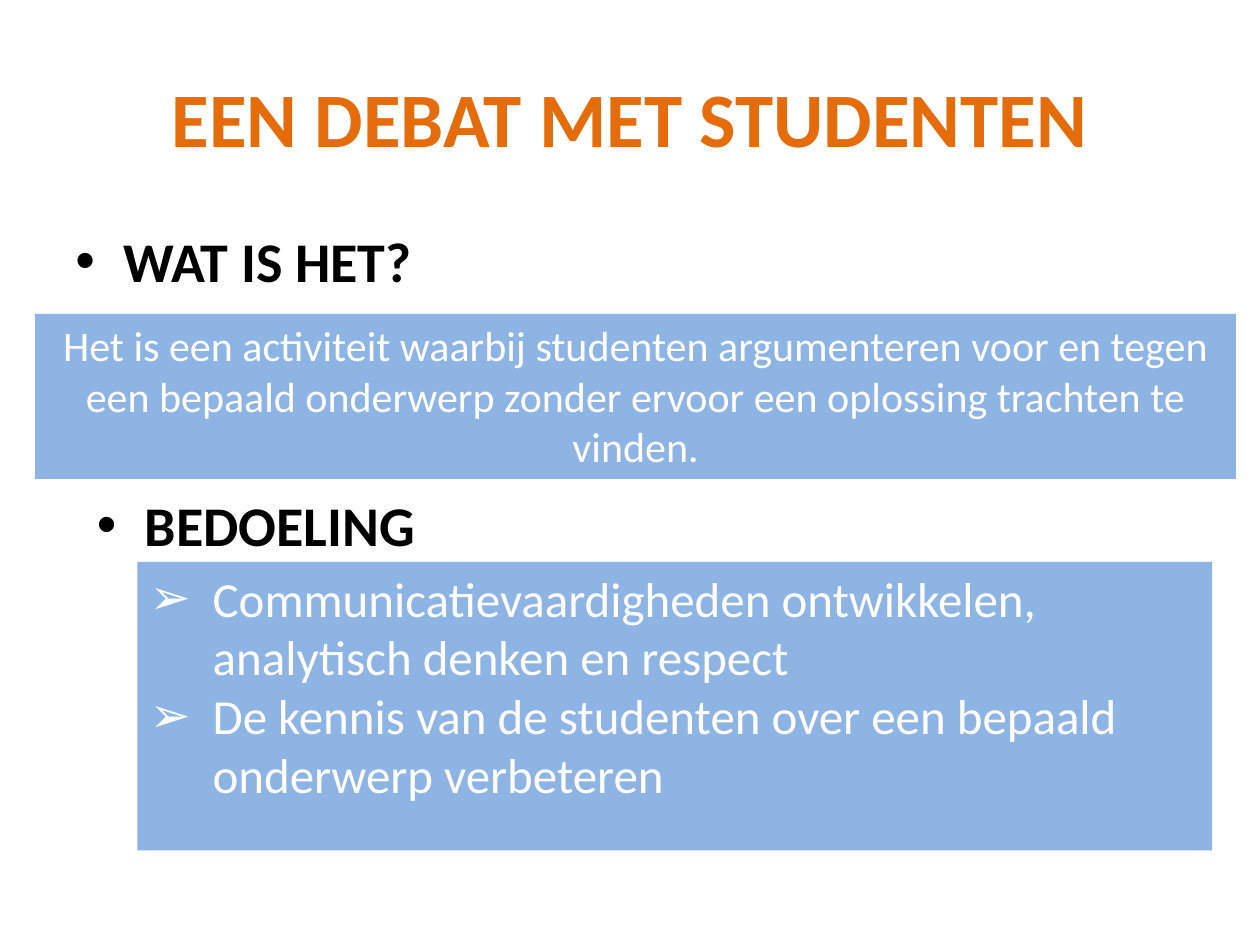
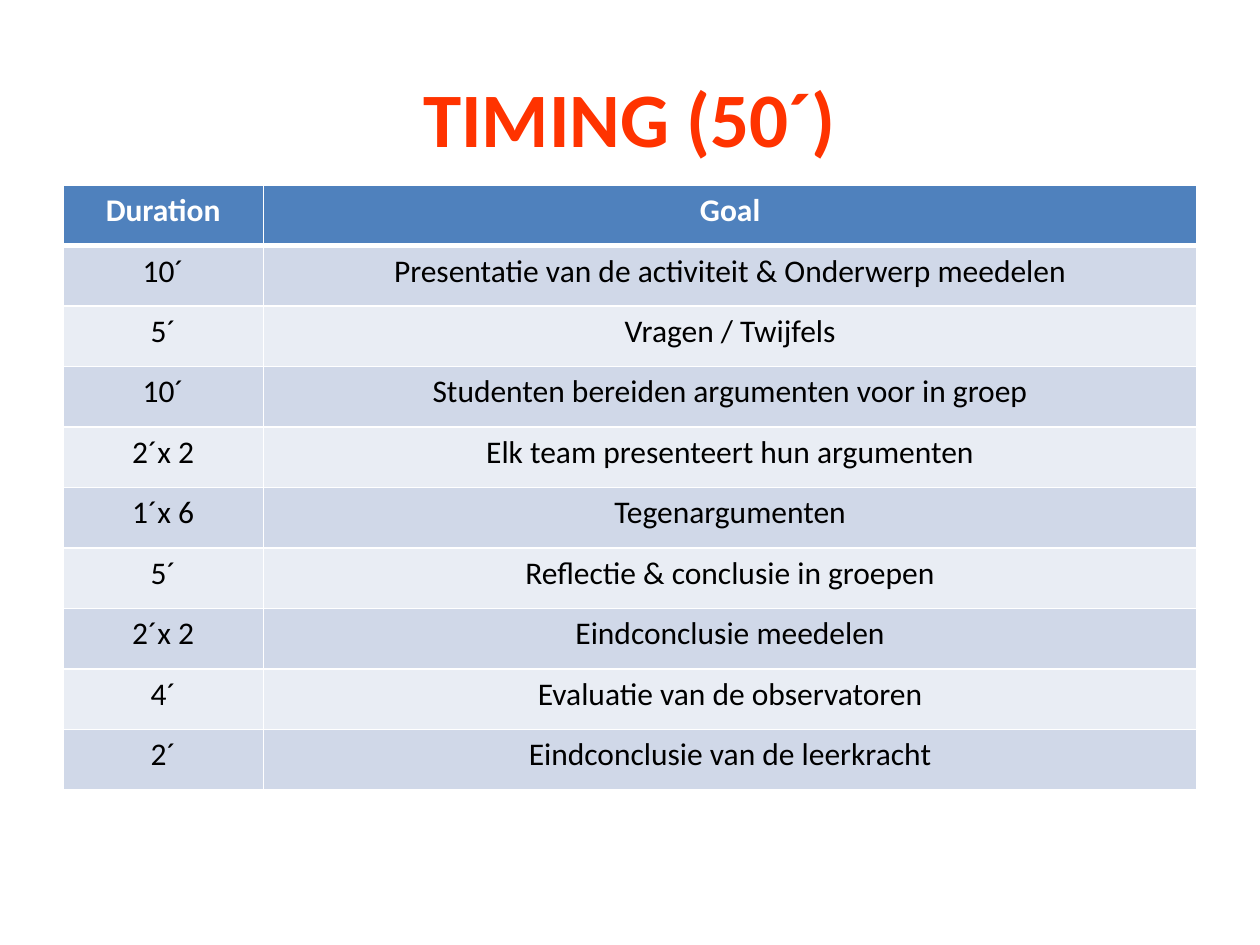
from lxml import etree
from pptx import Presentation
from pptx import util as u
from pptx.dml.color import RGBColor
from pptx.enum import shapes, text
from pptx.oxml.ns import qn

FONT = "Calibri"
COLS, ROWS = 20, 15
WHITE, BLACK = "FFFFFF", "000000"
ORANGE, RED = "E46C0A", "FF3300"
PANEL, HEADER = "8EB4E3", "4F81BD"
BANDS = ("D0D8E8", "E9EDF4")
CENTER = text.PP_ALIGN.CENTER
LEFT = text.PP_ALIGN.LEFT


def rgb(hex_string):
    return RGBColor.from_string(hex_string)


def add_bullet(p, char, indent):
    """Give the paragraph a bullet with a hanging indent in inches."""
    pPr = p._p.get_or_add_pPr()
    pPr.set("marL", str(u.Inches(indent)))
    pPr.set("indent", str(-u.Inches(indent)))
    etree.SubElement(pPr, qn("a:buFont"), typeface="Arial")
    etree.SubElement(pPr, qn("a:buChar"), char=char)


def write(tf, lines, size=18, color=BLACK, bold=False, align=LEFT,
          anchor=text.MSO_ANCHOR.TOP, bullet=None, indent=0.38):
    tf.word_wrap = True
    tf.vertical_anchor = anchor
    for i, line in enumerate(lines):
        p = tf.add_paragraph() if i else tf.paragraphs[0]
        p.alignment = align
        if bullet:
            add_bullet(p, bullet, indent)
        r = p.add_run()
        r.text = line
        r.font.name, r.font.size, r.font.bold = FONT, u.Pt(size), bold
        r.font.color.rgb = rgb(color)


def set_borders(cell, top=1, bottom=1):
    tcPr = cell._tc.get_or_add_tcPr()
    widths = {"a:lnL": 1, "a:lnR": 1, "a:lnT": top, "a:lnB": bottom}
    for i, (tag, width) in enumerate(widths.items()):
        ln = etree.Element(qn(tag), w=str(u.Pt(width)))
        fill = etree.SubElement(ln, qn("a:solidFill"))
        etree.SubElement(fill, qn("a:srgbClr"), val=WHITE)
        tcPr.insert(i, ln)


class Deck:
    """Holds the presentation and its current slide; places are grid units."""

    def __init__(self):
        self.prs = Presentation()
        self.prs.slide_width, self.prs.slide_height = u.Inches(10), u.Inches(7.5)
        self.s = None

    def grid(self, col, row, cols, rows):
        x, y = self.prs.slide_width / COLS, self.prs.slide_height / ROWS
        return [round(n) for n in (col * x, row * y, cols * x, rows * y)]

    def slide(self, title, color):
        self.s = self.prs.slides.add_slide(self.prs.slide_layouts[6])
        self.text((1, 0.6, 18, 2.5), [title], size=44, color=color, bold=True,
                  align=CENTER, anchor=text.MSO_ANCHOR.MIDDLE)

    def text(self, place, lines, **style):
        write(self.s.shapes.add_textbox(*self.grid(*place)).text_frame, lines, **style)

    def heading(self, place, line):
        self.text(place, [line], size=32, bold=True, bullet="•")

    def panel(self, place, lines, **style):
        sp = self.s.shapes.add_shape(shapes.MSO_SHAPE.RECTANGLE, *self.grid(*place))
        sp.shadow.inherit = False
        sp.fill.solid()
        sp.fill.fore_color.rgb = rgb(PANEL)
        sp.line.fill.background()
        write(sp.text_frame, lines, color=WHITE, **style)

    def table(self, place, widths, rows):
        """Draw a banded table whose first row is the header."""
        table = self.s.shapes.add_table(len(rows), len(widths), *self.grid(*place)).table
        for column, width in zip(table.columns, widths):
            column.width = self.grid(0, 0, width, 0)[2]
        for i, row in enumerate(rows):
            header = i == 0
            for j, value in enumerate(row):
                cell = table.cell(i, j)
                cell.fill.solid()
                cell.fill.fore_color.rgb = rgb(HEADER if header else BANDS[(i - 1) % 2])
                set_borders(cell, top=3 if i == 1 else 1, bottom=3 if header else 1)
                write(cell.text_frame, [value], bold=header, align=CENTER,
                      color=WHITE if header else BLACK)


def main():
    deck = Deck()

    deck.slide("EEN DEBAT MET STUDENTEN", ORANGE)
    deck.heading((1, 3.5, 18, 2.58), "WAT IS HET?")
    deck.panel((0.56, 4.98, 19.06, 2.62),
               ["Het is een activiteit waarbij studenten argumenteren voor en tegen "
                "een bepaald onderwerp zonder ervoor een oplossing trachten te vinden."],
               size=24, align=CENTER)
    deck.heading((1.34, 7.68, 18, 3.04), "BEDOELING")
    deck.panel((2.18, 8.92, 17.06, 4.58),
               ["Communicatievaardigheden ontwikkelen, analytisch denken en respect",
                "De kennis van de studenten over een bepaald onderwerp verbeteren"],
               size=28, bullet="➢", indent=0.5)

    deck.slide("TIMING (50´)", RED)
    deck.table((1, 2.94, 18, 9.6), (3.18, 14.82), [
        ("Duration", "Goal"),
        ("10´", "Presentatie van de activiteit & Onderwerp meedelen"),
        ("5´", "Vragen / Twijfels"),
        ("10´", "Studenten bereiden argumenten voor in groep"),
        ("2´x 2", "Elk team presenteert hun argumenten"),
        ("1´x 6", "Tegenargumenten"),
        ("5´", "Reflectie & conclusie in groepen"),
        ("2´x 2", "Eindconclusie meedelen"),
        ("4´", "Evaluatie van de observatoren"),
        ("2´", "Eindconclusie van de leerkracht"),
    ])

    deck.prs.save("out.pptx")


if __name__ == "__main__":
    main()
